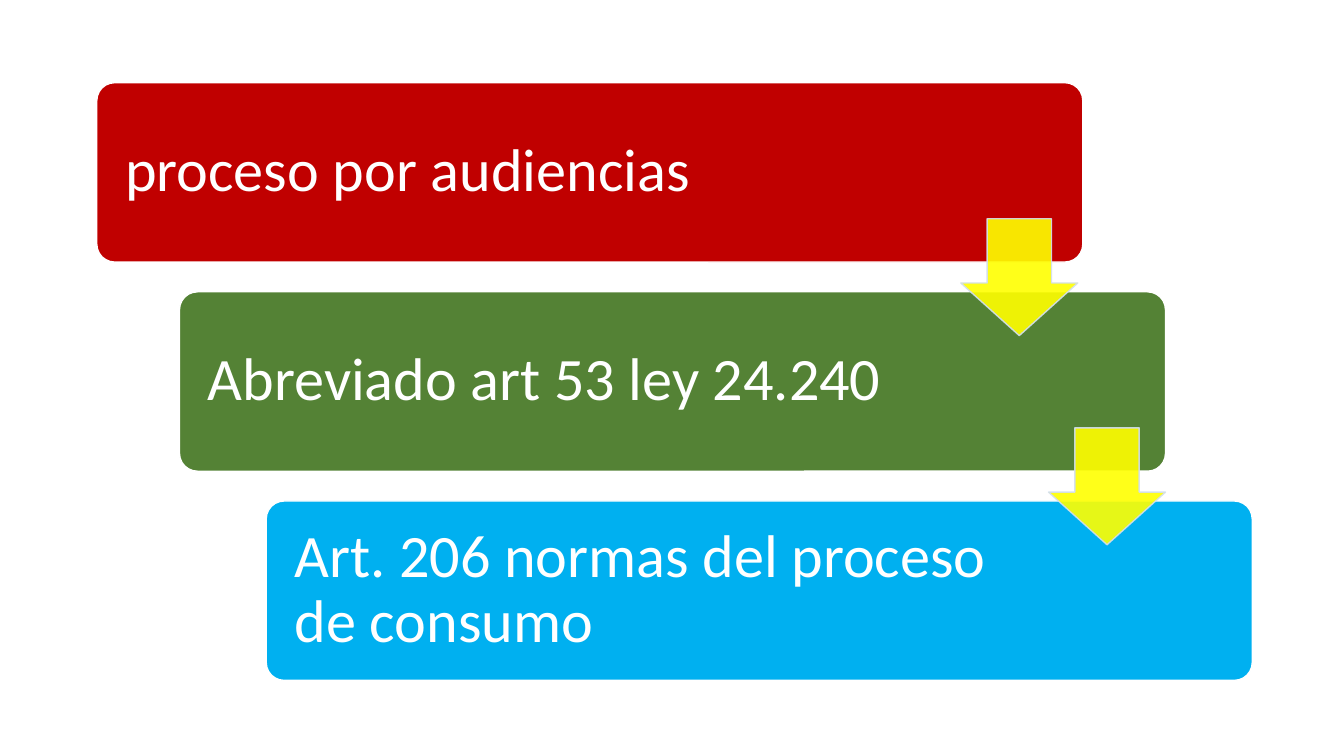
from lxml import etree
from pptx import Presentation, util as u
from pptx.dml.color import RGBColor
from pptx.enum import shapes, text
from pptx.oxml.ns import qn

HUES = {"red": "C00000", "green": "548235", "blue": "00B0F0",
        "yellow": "FFFF00", "pale": "D2DEEF", "white": "FFFFFF"}
STEPS = [
    (0.96, "red", "proceso por audiencias"),
    (1.78, "green", "Abreviado art 53 ley 24.240"),
    (2.64, "blue", "Art. 206 normas del proceso de consumo"),
]
ARROWS = [9.53, 10.4]
TOP, PITCH = 0.82, 2.075
WIDTH, HEIGHT = 9.78, 1.78
ARROW_TOP, ARROW_SIZE = 2.17, 1.16


class Deck:
    font = "Calibri"
    size = 43
    frame = {
        "word_wrap": True,
        "vertical_anchor": text.MSO_ANCHOR.MIDDLE,
        "margin_left": u.Inches(0.23),
        "margin_right": u.Inches(2.26),
        "margin_top": u.Inches(0.23),
        "margin_bottom": u.Inches(0.23),
    }

    def __init__(self, slide):
        self.slide = slide

    def shape(self, kind, box, adjs, fill, line, alpha=None):
        item = self.slide.shapes.add_shape(kind, *map(u.Inches, box))
        item.shadow.inherit = False
        for i, adj in enumerate(adjs):
            item.adjustments[i] = adj
        item.fill.solid()
        item.line.width = u.Pt(1)
        for paint, hue in ((item.fill.fore_color, fill), (item.line.color, line)):
            paint.rgb = RGBColor.from_string(HUES[hue])
        if alpha:
            for tint in item._element.spPr.iter(qn("a:srgbClr")):
                etree.SubElement(tint, qn("a:alpha"), val=str(alpha * 1000))
        return item

    def step(self, left, top, hue, words):
        item = self.shape(shapes.MSO_SHAPE.ROUNDED_RECTANGLE,
                          (left, top, WIDTH, HEIGHT), [0.1], hue, "white")
        for name, value in self.frame.items():
            setattr(item.text_frame, name, value)
        para = item.text_frame.paragraphs[0]
        para.alignment = text.PP_ALIGN.LEFT
        para.line_spacing = 0.9
        run = para.add_run()
        run.text = words
        for name, value in {"name": self.font, "size": u.Pt(self.size)}.items():
            setattr(run.font, name, value)
        run.font.color.rgb = RGBColor.from_string(HUES["white"])

    def arrow(self, left, top):
        self.shape(shapes.MSO_SHAPE.DOWN_ARROW,
                   (left, top, ARROW_SIZE, ARROW_SIZE), [0.55, 0.45],
                   "yellow", "pale", alpha=90)


def main():
    prs = Presentation()
    prs.slide_width, prs.slide_height = u.Inches(13.33), u.Inches(7.5)
    deck = Deck(prs.slides.add_slide(prs.slide_layouts[6]))
    for row, (left, hue, words) in enumerate(STEPS):
        deck.step(left, TOP + row * PITCH, hue, words)
    for row, left in enumerate(ARROWS):
        deck.arrow(left, ARROW_TOP + row * PITCH)
    prs.save("out.pptx")


if __name__ == "__main__":
    main()
